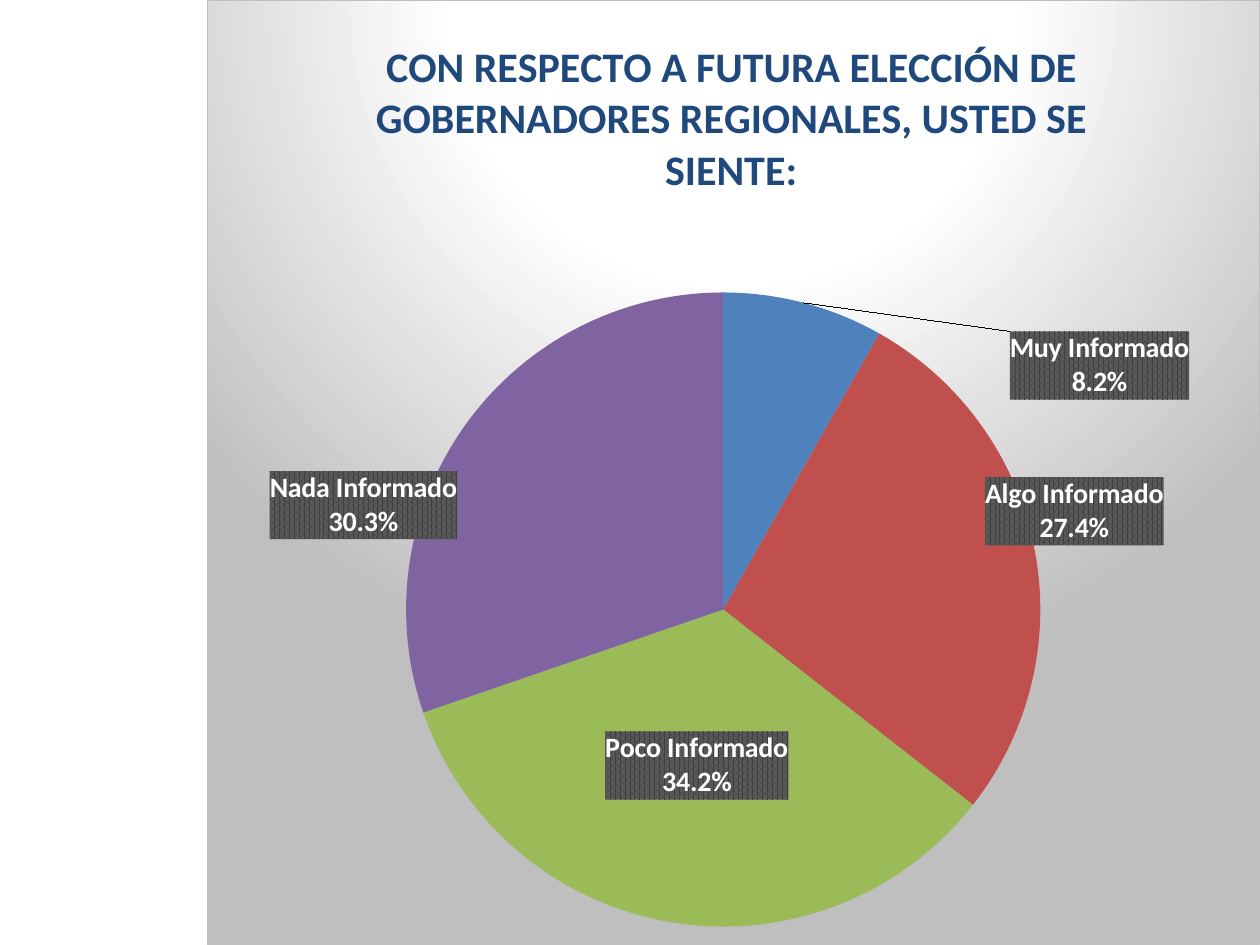
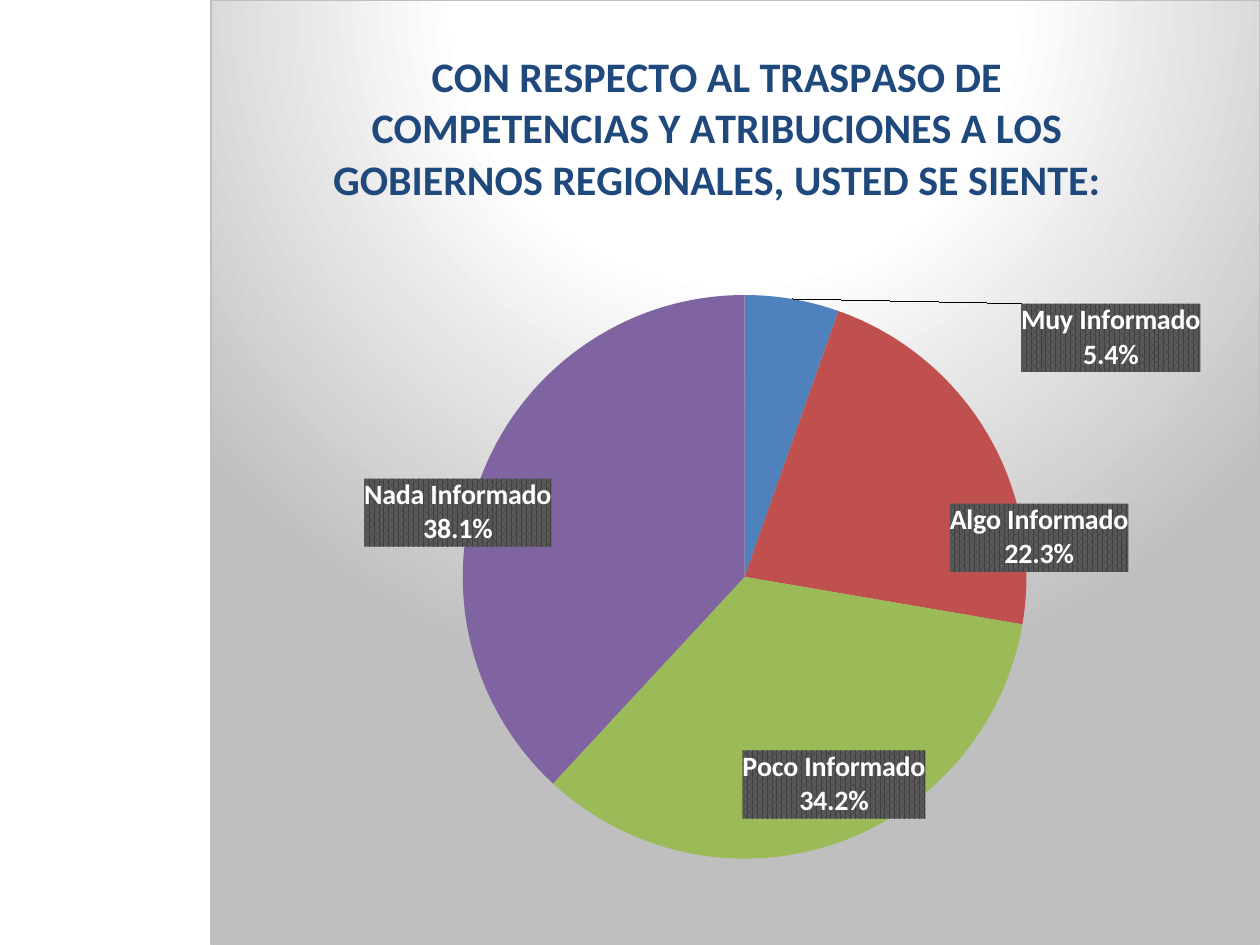
from math import cos, pi, sin

from lxml import etree
from pptx import Presentation
from pptx.chart.data import CategoryChartData
from pptx.dml.color import RGBColor
from pptx.enum.chart import XL_CHART_TYPE, XL_LABEL_POSITION
from pptx.oxml import parse_xml
from pptx.oxml.ns import nsdecls, qn
from pptx.util import Inches, Pt

COLORS = {
    "title": "1F497D", "label": "FFFFFF", "text": "000000",
    "center": "FFFFFF", "edge": "BFBFBF",
    "pattern_front": "404040", "pattern_back": "595959",
}
SLICES = {
    "Muy Informado": "4F81BD",
    "Algo Informado": "C0504D",
    "Poco Informado": "9BBB59",
    "Nada Informado": "8064A2",
}
TITLE_FORMAT = {"name": "Calibri", "size": Pt(24), "bold": True}
LABEL_FORMAT = {"name": "Calibri", "size": Pt(16), "bold": True}
HEIGHT = 7.5

# Lengths are inches on the slide: the pie is (left, top, diameter),
# and each label is given by its centre, in slice order.
SURVEYS = [
    {
        "title": "CON RESPECTO A FUTURA ELECCIÓN DE GOBERNADORES REGIONALES, USTED SE SIENTE:",
        "values": (8.2, 27.4, 34.2, 30.3),
        "left": 1.64,
        "title_at": (2.92, 0.24),
        "pie": (3.22, 2.32, 5.04),
        "labels": ((8.73, 2.9), (8.53, 4.06), (5.53, 6.08), (2.88, 4.01)),
    },
    {
        "title": "CON RESPECTO AL TRASPASO DE COMPETENCIAS Y ATRIBUCIONES A LOS "
                 "GOBIERNOS REGIONALES, USTED SE SIENTE:",
        "values": (5.4, 22.3, 34.2, 38.1),
        "left": 1.67,
        "title_at": (2.58, 0.32),
        "pie": (3.67, 2.34, 4.48),
        "labels": ((8.82, 2.68), (8.25, 4.27), (6.62, 6.23), (3.63, 4.07)),
    },
]

CHART_FRAME = f"""<c:spPr {nsdecls("c", "a")}>
  <a:gradFill><a:gsLst>
    <a:gs pos="0"><a:srgbClr val="{COLORS['center']}"/></a:gs>
    <a:gs pos="39000"><a:srgbClr val="{COLORS['center']}"/></a:gs>
    <a:gs pos="100000"><a:srgbClr val="{COLORS['edge']}"/></a:gs>
  </a:gsLst><a:path path="circle">
    <a:fillToRect l="50000" t="-80000" r="50000" b="180000"/>
  </a:path></a:gradFill>
  <a:ln w="9525"><a:solidFill><a:srgbClr val="{COLORS['edge']}"/></a:solidFill></a:ln>
</c:spPr>"""
LABEL_FRAME = f"""<c:spPr {nsdecls("c", "a")}>
  <a:pattFill prst="pct75">
    <a:fgClr><a:srgbClr val="{COLORS['pattern_front']}"/></a:fgClr>
    <a:bgClr><a:srgbClr val="{COLORS['pattern_back']}"/></a:bgClr>
  </a:pattFill><a:ln><a:noFill/></a:ln>
</c:spPr>"""


def manual_layout(target="", mode="edge", **fractions):
    """Return a c:layout whose fractions are of the chart's size."""
    layout = parse_xml(f"<c:layout {nsdecls('c')}><c:manualLayout/></c:layout>")
    settings = {"layoutTarget": target} if target else {}
    if mode == "edge":
        settings.update(xMode=mode, yMode=mode)
    settings.update({name: f"{value:.4f}" for name, value in fractions.items()})
    for name, value in settings.items():
        etree.SubElement(layout[0], qn(f"c:{name}")).set("val", value)
    return layout


def apply_format(font, values, color):
    for name, value in values.items():
        setattr(font, name, value)
    font.color.rgb = RGBColor.from_string(color)


presentation = Presentation()
presentation.slide_width = Inches(10)
presentation.slide_height = Inches(HEIGHT)

for survey in SURVEYS:
    slide = presentation.slides.add_slide(presentation.slide_layouts[6])
    left = survey["left"]
    width = 10 - left
    chart_data = CategoryChartData()
    chart_data.categories = list(SLICES)
    chart_data.add_series("Series 1", survey["values"])
    chart = slide.shapes.add_chart(
        XL_CHART_TYPE.PIE, Inches(left), Inches(0), Inches(width), Inches(HEIGHT), chart_data
    ).chart
    chart.has_legend = False
    apply_format(chart.font, {"name": "Calibri", "size": Pt(10)}, COLORS["text"])
    chart.element.find(qn("c:chart")).addnext(parse_xml(CHART_FRAME))

    # Title
    chart.has_title = True
    paragraph = chart.chart_title.text_frame.paragraphs[0]
    run = paragraph.add_run()
    run.text = survey["title"]
    for font in (paragraph.font, run.font):
        apply_format(font, TITLE_FORMAT, COLORS["title"])
    title = chart.element.find(".//" + qn("c:title"))
    for layout in title.findall(qn("c:layout")):
        title.remove(layout)
    title_left, title_top = survey["title_at"]
    title.find(qn("c:tx")).addnext(
        manual_layout(x=(title_left - left) / width, y=title_top / HEIGHT))

    # Pie
    pie_left, pie_top, diameter = survey["pie"]
    plot_area = chart.element.find(".//" + qn("c:plotArea"))
    for layout in plot_area.findall(qn("c:layout")):
        plot_area.remove(layout)
    plot_area.insert(0, manual_layout(
        "inner", x=(pie_left - left) / width, y=pie_top / HEIGHT,
        w=diameter / width, h=diameter / HEIGHT))
    plot = chart.plots[0]
    plot.vary_by_categories = True
    series = plot.series[0]
    for index, color in enumerate(SLICES.values()):
        fill = series.points[index].format.fill
        fill.solid()
        fill.fore_color.rgb = RGBColor.from_string(color)

    # Labels
    labels = series.data_labels
    apply_format(labels.font, LABEL_FORMAT, COLORS["label"])
    labels.number_format = "0.0%"
    labels.number_format_is_linked = False
    labels.show_value = False
    labels.show_category_name = True
    labels.show_percentage = True
    labels.position = XL_LABEL_POSITION.CENTER
    label_list = series.data_labels._element
    label_list.find(qn("c:numFmt")).addnext(parse_xml(LABEL_FRAME))
    leader_lines = label_list.find(qn("c:showLeaderLines"))
    if leader_lines is None:
        leader_lines = etree.SubElement(label_list, qn("c:showLeaderLines"))
    leader_lines.set("val", "1")
    shared_xml = "".join(
        etree.tostring(child, encoding="unicode") for child in label_list
        if child is not leader_lines)

    # A label moves from the middle of its slice's radius to its own centre.
    turn = 0
    for index, (value, (x, y)) in enumerate(zip(survey["values"], survey["labels"])):
        angle = 2 * pi * (turn + value / 2) / sum(survey["values"])
        turn += value
        slice_x = pie_left + diameter / 2 + diameter / 4 * sin(angle)
        slice_y = pie_top + diameter / 2 - diameter / 4 * cos(angle)
        label = parse_xml(
            f'<c:dLbl {nsdecls("c", "a")}><c:idx val="{index}"/>{shared_xml}</c:dLbl>')
        label.insert(1, manual_layout(
            mode="factor", x=(x - slice_x) / width, y=(y - slice_y) / HEIGHT))
        label_list.insert(index, label)

presentation.save("out.pptx")
